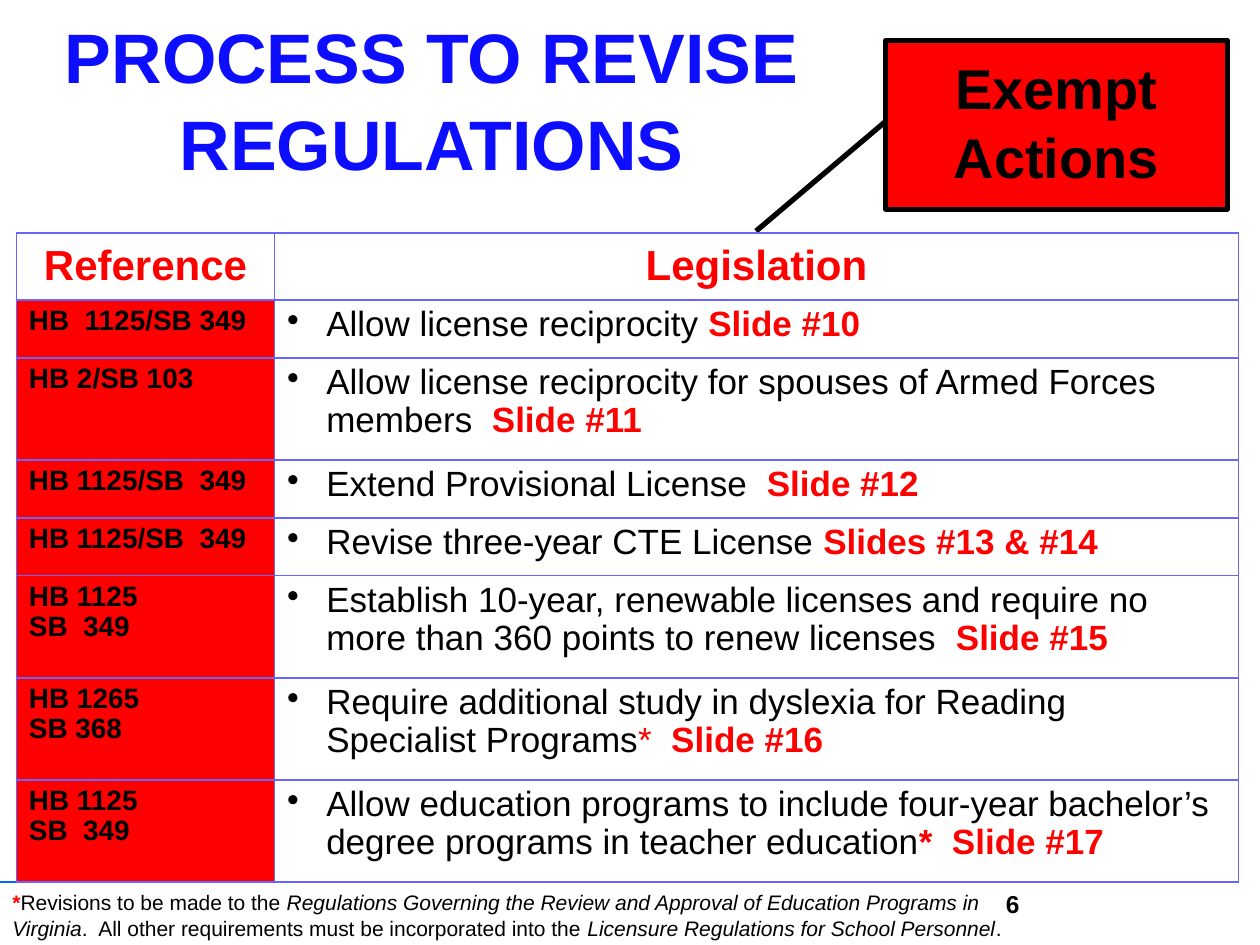
import pptx
import pptx.dml.color
import pptx.enum.shapes
import pptx.enum.text
import pptx.oxml
import pptx.oxml.ns
import pptx.util
from pptx.util import Inches

COLORS = {
    "title": "0D0DFF",
    "red": "FF0000",
    "black": "000000",
    "white": "FFFFFF",
    "border": "6666FF",
    "rule": "0066FF",
}
ALIGN = pptx.enum.text.PP_ALIGN
ANCHOR = pptx.enum.text.MSO_ANCHOR
SHAPE = pptx.enum.shapes.MSO_SHAPE
NS = pptx.oxml.ns.nsdecls("a")

STRONG = {"color": "red", "bold": True}
ITALIC = {"italic": True}

# Reference lines, row height, legislation runs
ACTIONS = [
    (["HB  1125/SB 349"], 0.46,
     ["Allow license reciprocity ", ("Slide #10", STRONG)]),
    (["HB 2/SB 103"], 0.81,
     ["Allow license reciprocity for spouses of Armed Forces members  ",
      ("Slide #11", STRONG)]),
    (["HB 1125/SB  349"], 0.46,
     ["Extend Provisional License  ", ("Slide #12", STRONG)]),
    (["HB 1125/SB  349"], 0.46,
     ["Revise three-year CTE License ", ("Slides #13 & #14", STRONG)]),
    (["HB 1125", "SB  349"], 0.81,
     ["Establish 10-year, renewable licenses and require no more than 360 "
      "points to renew licenses  ", ("Slide #15", STRONG)]),
    (["HB 1265", "SB 368"], 0.81,
     ["Require additional study in dyslexia for Reading Specialist Programs",
      ("*  ", {"color": "red"}), ("Slide #16", STRONG)]),
    (["HB 1125", "SB  349"], 0.81,
     ["Allow education programs to include four-year bachelor’s degree "
      "programs in teacher education", ("*  Slide #17", STRONG)]),
]

FOOTNOTE = [
    ("*", STRONG),
    "Revisions to be made to the ",
    ("Regulations Governing the Review and Approval of Education Programs "
     "in Virginia", ITALIC),
    ".  All other requirements must be incorporated into the",
    (" Licensure Regulations for School Personnel", ITALIC),
    ".",
]


def rgb(name):
    return pptx.dml.color.RGBColor.from_string(COLORS[name])


def write(frame, paragraphs, *, size, color="black", bold=False, italic=False,
          align=ALIGN.LEFT, spacing=1.04, bullet=False):
    """Fill a frame; each paragraph is a list of texts or (text, changes) pairs."""
    for index, runs in enumerate(paragraphs):
        paragraph = frame.paragraphs[0] if index == 0 else frame.add_paragraph()
        paragraph.alignment = align
        paragraph.line_spacing = spacing
        paragraph.space_before = pptx.util.Pt(0)
        if bullet:
            properties = paragraph._p.get_or_add_pPr()
            properties.set("marL", str(Inches(0.31)))
            properties.set("indent", str(-Inches(0.31)))
            properties.append(pptx.oxml.parse_xml(f'<a:buChar {NS} char="•"/>'))
        for part in runs:
            text, changes = (part, {}) if isinstance(part, str) else part
            style = {"color": color, "bold": bold, "italic": italic, **changes}
            run = paragraph.add_run()
            run.text = text
            run.font.name = "Arial"
            run.font.size = pptx.util.Pt(size)
            run.font.bold = style["bold"]
            run.font.italic = style["italic"]
            run.font.color.rgb = rgb(style["color"])


class SlideBuilder:
    def __init__(self, slide):
        self.slide = slide

    def title(self, text, box):
        heading = self.slide.shapes.title
        heading.left, heading.top, heading.width, heading.height = map(Inches, box)
        frame = heading.text_frame
        frame.word_wrap = True
        frame.auto_size = pptx.enum.text.MSO_AUTO_SIZE.NONE
        frame.vertical_anchor = ANCHOR.MIDDLE
        frame.margin_bottom = Inches(0.71)
        write(frame, [[text]], size=40, color="title", bold=True, align=ALIGN.CENTER)

    def rule(self, start, end):
        line = self.slide.shapes.add_connector(
            pptx.enum.shapes.MSO_CONNECTOR.STRAIGHT, *map(Inches, start + end))
        line.line.color.rgb = rgb("rule")
        line.line.width = pptx.util.Pt(1.25)
        line._element.spPr.append(pptx.oxml.parse_xml(f"<a:effectLst {NS}/>"))

    def callout(self, lines, box, pointer):
        callout = self.slide.shapes.add_shape(SHAPE.LINE_CALLOUT_1, *map(Inches, box))
        callout.shadow.inherit = False
        for index, value in enumerate(pointer):
            callout.adjustments[index] = value
        callout.fill.solid()
        callout.fill.fore_color.rgb = rgb("red")
        callout.line.color.rgb = rgb("black")
        callout.line.width = pptx.util.Pt(3)
        frame = callout.text_frame
        frame.vertical_anchor = ANCHOR.TOP
        frame.margin_top = Inches(0.08)
        write(frame, [[line] for line in lines], size=32, bold=True, align=ALIGN.CENTER)

    def text(self, runs, box, **style):
        frame = self.slide.shapes.add_textbox(*map(Inches, box)).text_frame
        frame.word_wrap = True
        write(frame, [runs], **style)

    def cell(self, cell, paragraphs, fill, anchor=ANCHOR.TOP, **style):
        properties = cell._tc.get_or_add_tcPr()
        for side in "LRTB":
            properties.append(pptx.oxml.parse_xml(
                f'<a:ln{side} {NS} w="12700"><a:solidFill>'
                f'<a:srgbClr val="{COLORS["border"]}"/></a:solidFill></a:ln{side}>'))
        cell.fill.solid()
        cell.fill.fore_color.rgb = rgb(fill)
        cell.vertical_anchor = anchor
        write(cell.text_frame, paragraphs, spacing=0.97, **style)

    def legislation_table(self, headers, actions, box, widths):
        table = self.slide.shapes.add_table(
            len(actions) + 1, len(headers), *map(Inches, box)).table
        for column, width in zip(table.columns, widths):
            column.width = Inches(width)
        table.rows[0].height = Inches(0.53)
        for index, header in enumerate(headers):
            self.cell(table.cell(0, index), [[header]], "white", ANCHOR.MIDDLE,
                      size=24, color="red", bold=True, align=ALIGN.CENTER)
        for row, (references, height, legislation) in enumerate(actions, 1):
            table.rows[row].height = Inches(height)
            self.cell(table.cell(row, 0), [[line] for line in references], "red",
                      size=16, bold=True)
            self.cell(table.cell(row, 1), [legislation], "white", size=20, bullet=True)


def main():
    deck = pptx.Presentation()
    deck.slide_width, deck.slide_height = Inches(10), Inches(7.5)
    builder = SlideBuilder(deck.slides.add_slide(deck.slide_layouts[5]))
    builder.rule((8.25, 7), (0, 7))
    builder.title("PROCESS TO REVISE REGULATIONS", (0.11, 0.55, 6.63, 1.11))
    builder.callout(["Exempt", "Actions"], (7.03, 0.32, 2.71, 1.34),
                    (0.48, 0, 1.13, -0.38))
    builder.legislation_table(["Reference", "Legislation"], ACTIONS,
                              (0.13, 1.85, 9.7, 5.14), (2.05, 7.65))
    builder.text(["6"], (7.8, 7, 0.39, 0.5), size=14, bold=True, align=ALIGN.RIGHT)
    builder.text(FOOTNOTE, (0, 7, 8.16, 0.5), size=12)
    deck.save("out.pptx")


if __name__ == "__main__":
    main()
